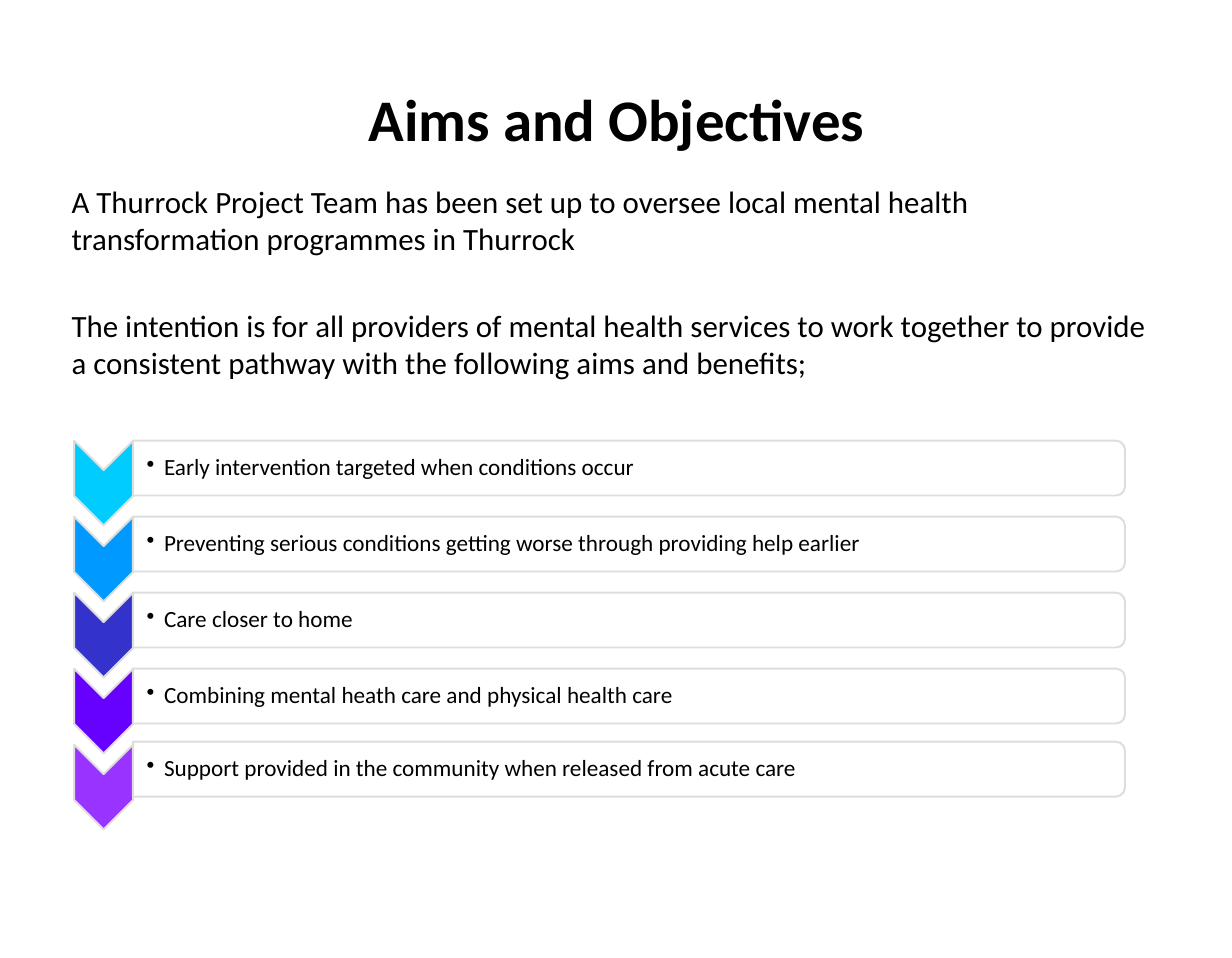
from dataclasses import dataclass

from lxml.etree import SubElement
from pptx import Presentation
from pptx.dml.color import RGBColor
from pptx.enum.shapes import MSO_SHAPE as SHAPE
from pptx.enum.text import MSO_ANCHOR as ANCHOR, PP_ALIGN as ALIGN
from pptx.oxml.ns import qn
from pptx.shapes.autoshape import Shape
from pptx.slide import Slide
from pptx.text.text import TextFrame
from pptx.util import Pt

BLACK = RGBColor(0x00, 0x00, 0x00)
WHITE = RGBColor(0xFF, 0xFF, 0xFF)
OUTLINE = RGBColor(0xDD, 0xDD, 0xDD)
CYAN = RGBColor(0x00, 0xCC, 0xFF)
AZURE = RGBColor(0x00, 0x99, 0xFF)
INDIGO = RGBColor(0x33, 0x33, 0xCC)
VIOLET = RGBColor(0x66, 0x00, 0xFF)
PURPLE = RGBColor(0x99, 0x33, 0xFF)

FIRST_TOP, ROW_STEP = 456.3, 78.7
CHEVRON_LEFT, CHEVRON_WIDTH, CHEVRON_HEIGHT = 76.7, 61.2, 87.8
BAR_LEFT, BAR_WIDTH, BAR_HEIGHT = 137.6, 1027.4, 56.9
LABEL_LEFT, LABEL_WIDTH, LABEL_HEIGHT = 138.2, 1024.6, 51.8
TEXT_LEFT, TEXT_WIDTH = 64.1, 1148.4


@dataclass(frozen=True)
class Aim:
    text: str
    color: RGBColor
    bar_shift: float = 0


AIMS = [
    Aim("Early intervention targeted when conditions occur", CYAN),
    Aim("Preventing serious conditions getting worse through providing help earlier", AZURE),
    Aim("Care closer to home", INDIGO),
    Aim("Combining mental heath care and physical health care", VIOLET),
    Aim("Support provided in the community when released from acute care", PURPLE, -3),
]

INTRO = [
    ("A Thurrock Project Team has been set up to oversee local mental health "
     "transformation programmes in Thurrock", 0),
    ("The intention is for all providers of mental health services to work together "
     "to provide a consistent pathway with the following aims and benefits;", 51.8),
]


def place(sp: Shape, left: float, top: float, width: float, height: float) -> None:
    box = {"left": left, "top": top, "width": width, "height": height}
    for name, value in box.items():
        setattr(sp, name, Pt(value))


def format_frame(tf: TextFrame, anchor: ANCHOR, left: float, top: float,
                 right: float, bottom: float) -> None:
    frame = {"word_wrap": True, "vertical_anchor": anchor,
             "margin_left": Pt(left), "margin_top": Pt(top),
             "margin_right": Pt(right), "margin_bottom": Pt(bottom)}
    for name, value in frame.items():
        setattr(tf, name, value)


def write(p, text: str, size: float, bold: bool = False, **paragraph) -> None:
    for name, value in paragraph.items():
        setattr(p, name, value)
    r = p.add_run()
    r.text = text
    for name, value in {"name": "Calibri", "size": Pt(size), "bold": bold}.items():
        setattr(r.font, name, value)
    r.font.color.rgb = BLACK


def add_turned(s: Slide, kind: SHAPE, left: float, top: float, width: float,
               height: float, color: RGBColor) -> Shape:
    shift = (width - height) / 2
    sp = s.shapes.add_shape(kind, Pt(left + shift), Pt(top - shift), Pt(height), Pt(width))
    sp.rotation = 90
    sp.shadow.inherit = False
    sp.fill.solid()
    sp.fill.fore_color.rgb = color
    sp.line.color.rgb = OUTLINE
    sp.line.width = Pt(2)
    return sp


def add_bullet(p) -> None:
    pPr = p._p.get_or_add_pPr()
    pPr.set("marL", str(Pt(18)))
    pPr.set("indent", str(-Pt(18)))
    SubElement(pPr, qn("a:buChar")).set("char", "•")


def add_aim(s: Slide, aim: Aim, top: float) -> None:
    add_turned(s, SHAPE.CHEVRON, CHEVRON_LEFT, top, CHEVRON_WIDTH, CHEVRON_HEIGHT, aim.color)
    bar_top = top + aim.bar_shift
    bar = add_turned(s, SHAPE.ROUND_2_SAME_RECTANGLE, BAR_LEFT, bar_top,
                     BAR_WIDTH, BAR_HEIGHT, WHITE)
    bar_color = bar._element.spPr.find(qn("a:solidFill")).find(qn("a:srgbClr"))
    SubElement(bar_color, qn("a:alpha")).set("val", "90000")
    label_top = bar_top + (BAR_HEIGHT - LABEL_HEIGHT) / 2
    label = s.shapes.add_textbox(Pt(LABEL_LEFT), Pt(label_top), Pt(LABEL_WIDTH), Pt(LABEL_HEIGHT))
    tf = label.text_frame
    format_frame(tf, ANCHOR.MIDDLE, 13.7, 1.4, 1.4, 1.4)
    p = tf.paragraphs[0]
    write(p, aim.text, 24, line_spacing=0.9, space_after=Pt(3.6))
    add_bullet(p)


def add_title(s: Slide) -> None:
    title = s.shapes.title
    place(title, TEXT_LEFT, 39.6, TEXT_WIDTH, 165.6)
    format_frame(title.text_frame, ANCHOR.MIDDLE, 10, 5, 10, 5)
    write(title.text_frame.paragraphs[0], "Aims and Objectives", 61, True,
          alignment=ALIGN.CENTER)


def add_intro(s: Slide) -> None:
    intro = s.shapes.add_textbox(Pt(TEXT_LEFT), Pt(184.3), Pt(TEXT_WIDTH), Pt(230))
    tf = intro.text_frame
    format_frame(tf, ANCHOR.TOP, 10, 5, 10, 5)
    for i, (text, gap) in enumerate(INTRO):
        p = tf.add_paragraph() if i else tf.paragraphs[0]
        write(p, text, 32, space_before=Pt(gap))


def main() -> None:
    prs = Presentation()
    prs.slide_width, prs.slide_height = Pt(1275.84), Pt(992.16)
    s = prs.slides.add_slide(prs.slide_layouts[5])
    add_title(s)
    add_intro(s)
    for i, aim in enumerate(AIMS):
        add_aim(s, aim, FIRST_TOP + i * ROW_STEP)
    prs.save("out.pptx")


if __name__ == "__main__":
    main()
